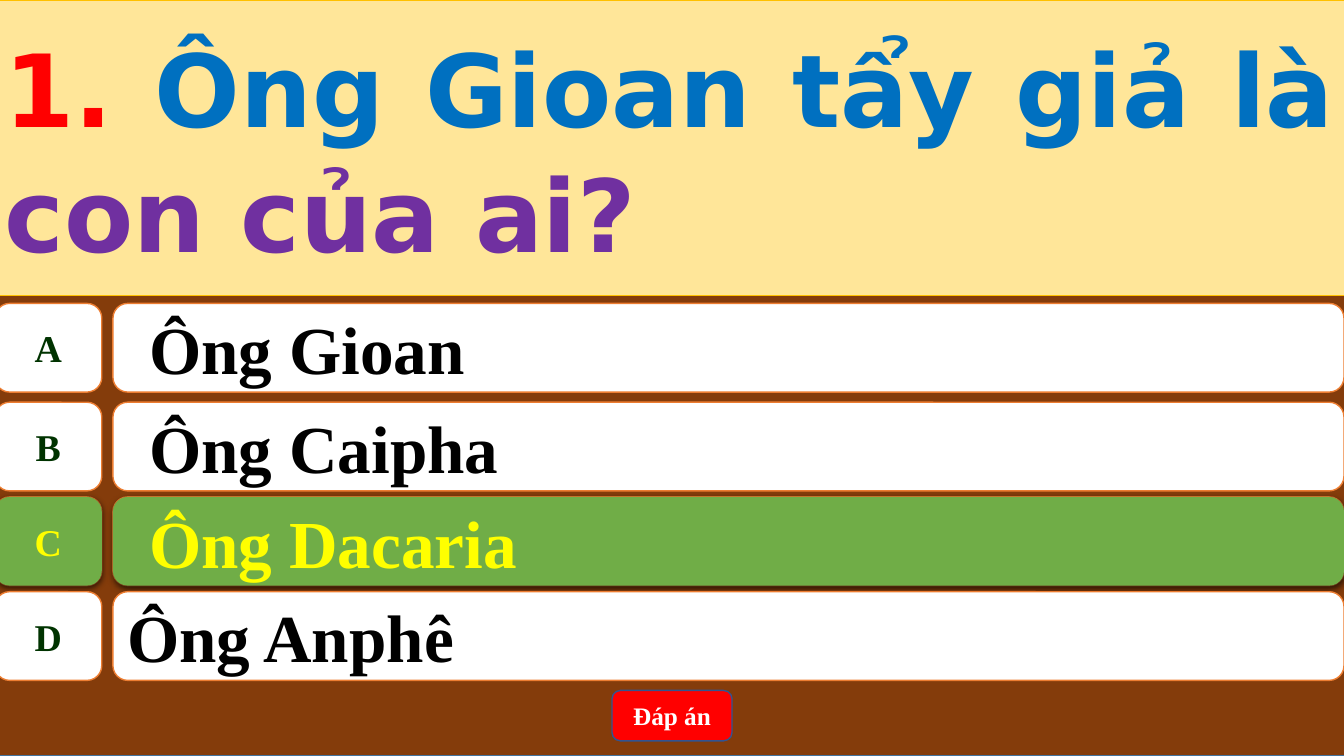
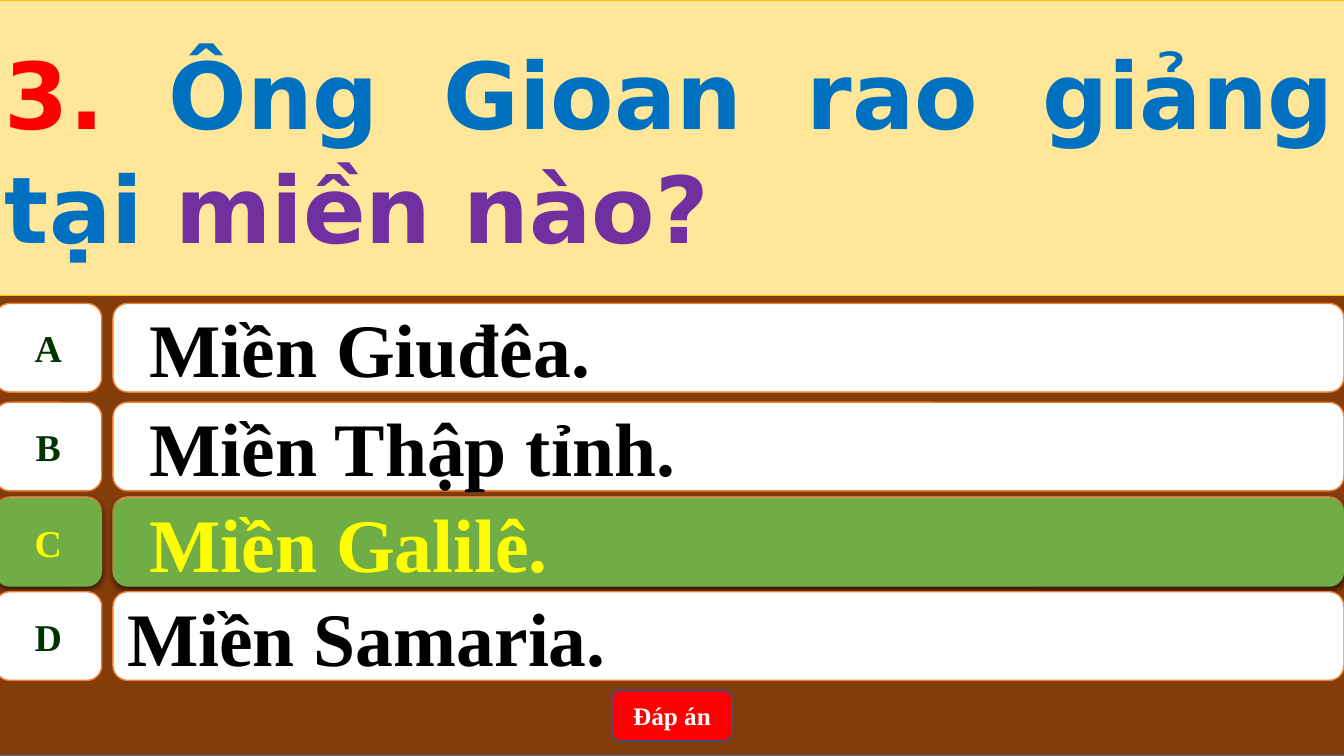
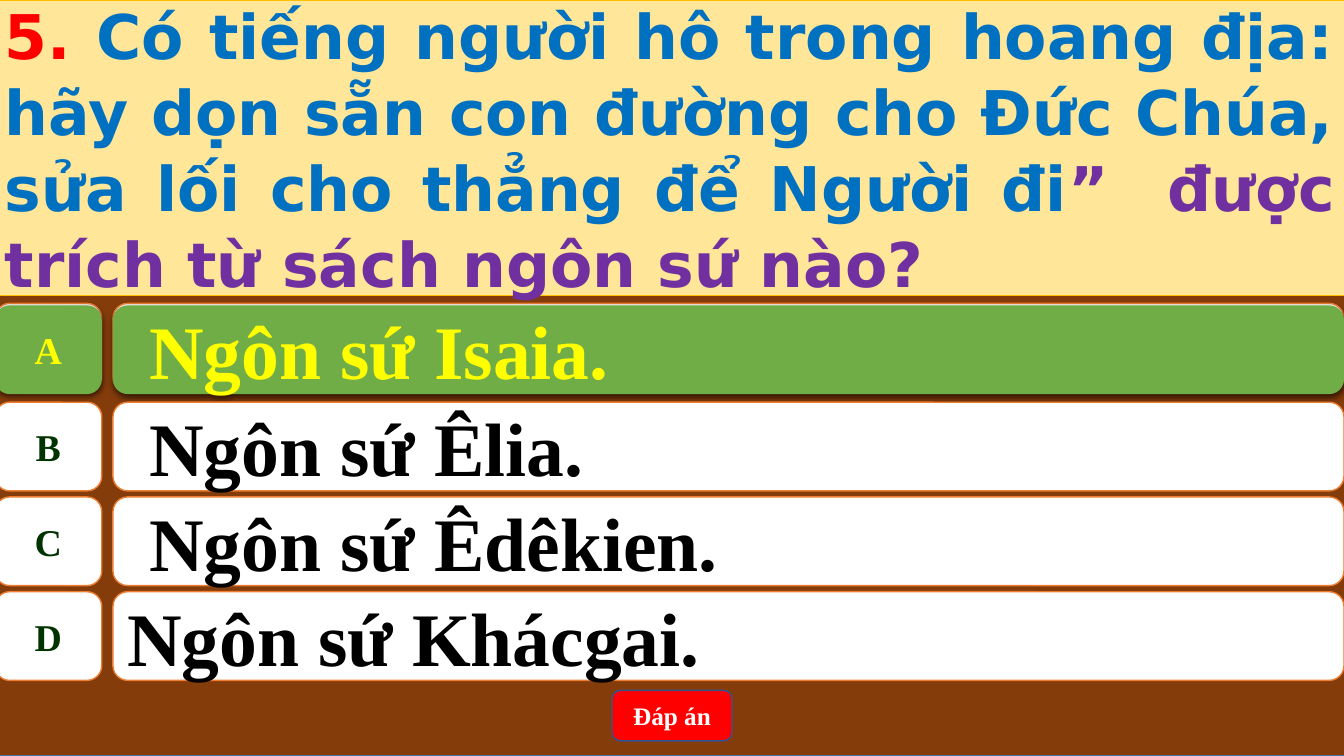
import pptx
import pptx.dml.color
import pptx.enum.shapes
import pptx.enum.text
import pptx.oxml.ns
import pptx.util
import lxml.etree

Inches = pptx.util.Inches
Pt = pptx.util.Pt
RGBColor = pptx.dml.color.RGBColor
SHAPE = pptx.enum.shapes.MSO_SHAPE
ALIGN = pptx.enum.text.PP_ALIGN
qn = pptx.oxml.ns.qn

# Colours
BROWN = RGBColor(0x84, 0x3C, 0x0B)
STEEL = RGBColor(0x43, 0x73, 0x9E)
CREAM = RGBColor(0xFF, 0xE6, 0x99)
GOLD = RGBColor(0xFF, 0xC0, 0x00)
ORANGE = RGBColor(0xED, 0x7D, 0x31)
NAVY = RGBColor(0x32, 0x54, 0x91)
WHITE = RGBColor(0xFF, 0xFF, 0xFF)
BLACK = RGBColor(0x00, 0x00, 0x00)
RED = RGBColor(0xFF, 0x00, 0x00)
BLUE = RGBColor(0x00, 0x70, 0xC0)
PURPLE = RGBColor(0x70, 0x30, 0xA0)
DARK_GREEN = RGBColor(0x00, 0x33, 0x00)
GREEN = RGBColor(0x70, 0xAD, 0x47)
YELLOW = RGBColor(0xFF, 0xFF, 0x00)

# Fonts and layout
QUESTION_FONT = "DejaVu Sans"
ANSWER_FONT = "Times New Roman"
LETTERS = "ABCD"
ROW_TOPS = (3.01, 3.99, 4.93, 5.87)
ROW_HEIGHT = 0.88
BAND_LEFT, BAND_WIDTH = -0.05, 13.39

# Each quiz: question size, coloured parts, answer size, answers,
# letter of the right answer and how far its highlight sits below the row
QUIZZES = [
    (72, ("1. ", "Ông Gioan tẩy giả là ", "con của ai?"),
     48, ("Ông Gioan", "Ông Caipha", "Ông Dacaria", "Ông Anphê"), "C", 0),
    (66, ("3. ", "Ông Gioan rao giảng tại ", "miền nào?"),
     54, ("Miền Giuđêa.", "Miền Thập tỉnh.", "Miền Galilê.", "Miền Samaria."),
     "C", 0.01),
    (44, ("5. ",
          "Có tiếng người hô trong hoang địa: hãy dọn sẵn con đường cho Đức Chúa, "
          "sửa lối cho thẳng để Người đi",
          "”  được trích từ sách ngôn sứ nào?"),
     54, ("Ngôn sứ Isaia.", "Ngôn sứ Êlia.", "Ngôn sứ Êdêkien.", "Ngôn sứ Khácgai."),
     "A", 0.02),
]


def add_box(shapes, kind, left, top, width, height, fill, line=None, line_width=1):
    """Add a filled shape without a shadow; no line colour means no outline."""
    shape = shapes.add_shape(kind, Inches(left), Inches(top),
                             Inches(width), Inches(height))
    shape.fill.solid()
    shape.fill.fore_color.rgb = fill
    if line is None:
        shape.line.fill.background()
    else:
        shape.line.color.rgb = line
        shape.line.width = Pt(line_width)
    shape.shadow.inherit = False
    return shape


def write(shape, parts, size, font, align=ALIGN.LEFT, wrap=True):
    """Write (text, colour) parts as the runs of one bold paragraph."""
    frame = shape.text_frame
    frame.word_wrap = wrap
    frame.vertical_anchor = pptx.enum.text.MSO_ANCHOR.MIDDLE
    paragraph = frame.paragraphs[0]
    paragraph.alignment = align
    for text, color in parts:
        run = paragraph.add_run()
        run.text = text
        run.font.name = font
        run.font.size = Pt(size)
        run.font.bold = True
        run.font.color.rgb = color
    return paragraph


def add_drop_shadow(shape):
    effects = shape._element.spPr.find(qn("a:effectLst"))
    shadow = lxml.etree.SubElement(
        effects, qn("a:outerShdw"), blurRad=str(Pt(4.5)), dist=str(Pt(1.5)),
        dir="5400000", algn="ctr", rotWithShape="0")
    color = lxml.etree.SubElement(shadow, qn("a:srgbClr"), val="000000")
    lxml.etree.SubElement(color, qn("a:alpha"), val="63000")


def indent_answer(paragraph):
    paragraph.level = 1
    properties = paragraph._p.get_or_add_pPr()
    properties.set("marL", str(Inches(0.5)))
    properties.set("indent", str(Inches(-0.28)))


def add_row(slide, top, fill, line=None):
    """Add the letter box and the answer box of one row as a group."""
    shapes = slide.shapes.add_group_shape().shapes
    letter_box = add_box(shapes, SHAPE.FLOWCHART_ALTERNATE_PROCESS,
                         BAND_LEFT, top, 1.06, ROW_HEIGHT, fill, line)
    answer_box = add_box(shapes, SHAPE.ROUNDED_RECTANGLE,
                         1.12, top, 12.21, ROW_HEIGHT, fill, line)
    return letter_box, answer_box


def fill_row(row, letter, answer, size, letter_color, answer_color):
    letter_box, answer_box = row
    write(letter_box, [(letter, letter_color)], 27, ANSWER_FONT, ALIGN.CENTER, wrap=False)
    paragraph = write(answer_box, [(answer, answer_color)], size, ANSWER_FONT)
    if letter != LETTERS[-1]:
        indent_answer(paragraph)


def add_answers(slide, answers, size, right_letter, offset):
    for letter, answer, top in zip(LETTERS, answers, ROW_TOPS):
        row = add_row(slide, top, WHITE, ORANGE)
        if letter != right_letter:
            fill_row(row, letter, answer, size, DARK_GREEN, BLACK)
            continue
        # The right answer is a green row laid over the white one
        highlight = add_row(slide, top + offset, GREEN)
        fill_row(highlight, letter, answer, size, YELLOW, YELLOW)
        for box in highlight:
            add_drop_shadow(box)


def add_question(slide, parts, size):
    panel = add_box(slide.shapes, SHAPE.RECTANGLE, BAND_LEFT, 0, BAND_WIDTH, 2.93,
                    CREAM, GOLD, 0.5)
    paragraph = write(panel, zip(parts, (RED, BLUE, PURPLE)), size,
                      QUESTION_FONT, ALIGN.JUSTIFY)
    paragraph.line_spacing = 1.03


def add_answer_button(slide):
    button = add_box(slide.shapes, SHAPE.ROUNDED_RECTANGLE, 6.07, 6.85, 1.19, 0.5,
                     RED, NAVY)
    write(button, [("Đáp án", WHITE)], 18, ANSWER_FONT, ALIGN.CENTER)


def add_quiz_slide(presentation, quiz):
    question_size, parts, answer_size, answers, right_letter, offset = quiz
    slide = presentation.slides.add_slide(presentation.slide_layouts[6])
    add_box(slide.shapes, SHAPE.RECTANGLE, BAND_LEFT, 0, BAND_WIDTH, 7.5, BROWN, STEEL)
    add_question(slide, parts, question_size)
    add_answers(slide, answers, answer_size, right_letter, offset)
    add_answer_button(slide)


def main():
    presentation = pptx.Presentation()
    presentation.slide_width = Inches(13.33)
    presentation.slide_height = Inches(7.5)
    for quiz in QUIZZES:
        add_quiz_slide(presentation, quiz)
    presentation.save("out.pptx")


if __name__ == "__main__":
    main()
